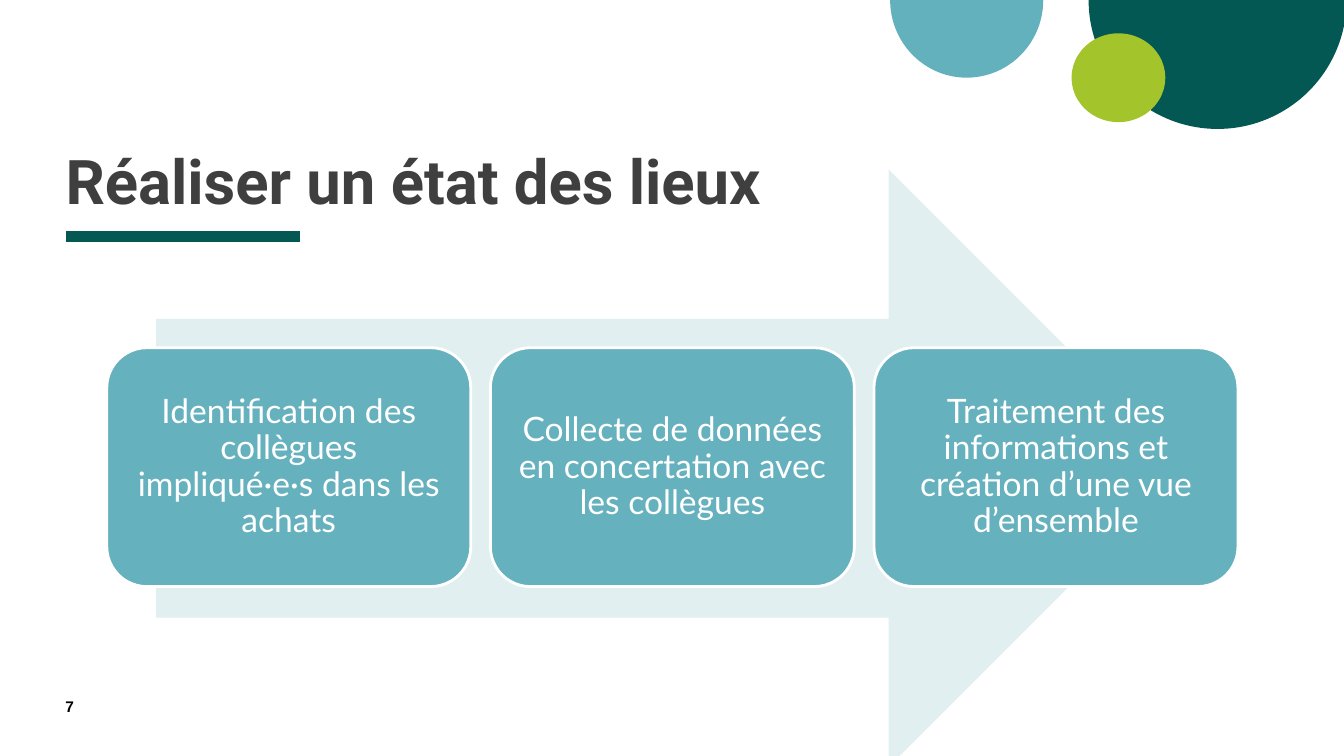
from pptx import Presentation
from pptx.dml.color import RGBColor
from pptx.enum.shapes import MSO_CONNECTOR, MSO_SHAPE
from pptx.enum.text import MSO_ANCHOR, PP_ALIGN
from pptx.oxml.xmlchemy import OxmlElement
from pptx.util import Pt

COLORS = {
    "forest": "035854",
    "teal": "64B1BE",
    "lime": "A3C42A",
    "mist": "E1EFF1",
    "step": "65B1BE",
    "white": "FFFFFF",
    "heading": "3F3F3F",
    "black": "000000",
}
STEPS = [
    "Identification des collègues impliqué·e·s dans les achats",
    "Collecte de données en concertation avec les collègues",
    "Traitement des informations et création d’une vue d’ensemble",
]
MARGIN = 46.8


def rgb(name):
    return RGBColor.from_string(COLORS[name])


def write(frame, text, *, font, size, color, bold=False, spacing=1.0,
          align=PP_ALIGN.LEFT, anchor=MSO_ANCHOR.TOP, inset=0):
    frame.word_wrap = True
    frame.vertical_anchor = anchor
    frame.margin_left = frame.margin_right = Pt(inset)
    frame.margin_top = frame.margin_bottom = Pt(inset)
    paragraph = frame.paragraphs[0]
    paragraph.alignment = align
    paragraph.line_spacing = spacing
    run = paragraph.add_run()
    run.text = text
    run.font.name = font
    run.font.size = Pt(size)
    run.font.bold = bold
    run.font.color.rgb = rgb(color)


class Deck:
    def __init__(self):
        self.presentation = Presentation()
        self.presentation.slide_width = Pt(960)
        self.presentation.slide_height = Pt(540)
        self.slide = self.presentation.slides.add_slide(
            self.presentation.slide_layouts[6])

    def shape(self, kind, left, top, width, height, fill, outline=None,
              adjustments=()):
        shape = self.slide.shapes.add_shape(
            kind, Pt(left), Pt(top), Pt(width), Pt(height))
        shape.shadow.inherit = False
        shape.fill.solid()
        shape.fill.fore_color.rgb = rgb(fill)
        if outline:
            shape.line.color.rgb = rgb(outline)
            shape.line.width = Pt(2)
        else:
            shape.line.fill.background()
        for index, value in enumerate(adjustments):
            shape.adjustments[index] = value
        return shape

    def half_disc(self, left, top, width, height, fill):
        self.shape(MSO_SHAPE.PIE, left, top, width, height, fill,
                   adjustments=(0, 108))

    def rule(self, left, right, y, color, weight):
        rule = self.slide.shapes.add_connector(
            MSO_CONNECTOR.STRAIGHT, Pt(left), Pt(y), Pt(right), Pt(y))
        rule.line.color.rgb = rgb(color)
        rule.line.width = Pt(weight)
        rule._element.spPr.append(OxmlElement("a:effectLst"))

    def text(self, text, left, top, width, height, **style):
        box = self.slide.shapes.add_textbox(
            Pt(left), Pt(top), Pt(width), Pt(height))
        write(box.text_frame, text, **style)

    def step(self, text, left, top, width, height):
        card = self.shape(MSO_SHAPE.ROUNDED_RECTANGLE, left, top, width,
                          height, "step", "white", (0.167,))
        write(card.text_frame, text, font="Lato", size=24, color="white",
              spacing=0.9, align=PP_ALIGN.CENTER, anchor=MSO_ANCHOR.MIDDLE,
              inset=9.4)


def main():
    deck = Deck()
    deck.half_disc(777.6, -92.2, 184.3, 184.3, "forest")
    deck.rule(MARGIN, 214.6, 169.2, "forest", 8)
    deck.half_disc(635.8, -55.4, 109.4, 110.9, "teal")
    deck.shape(MSO_SHAPE.OVAL, 765.4, 23.8, 67, 63.4, "lime")
    deck.text("Réaliser un état des lieux", MARGIN, 29.5, 534.2, 125.3,
              font="Roboto", size=44, color="heading", bold=True,
              spacing=0.8, anchor=MSO_ANCHOR.BOTTOM)
    deck.text("7", MARGIN, 498.2, 41, 19.4,
              font="Arial", size=11, color="black", bold=True)
    deck.shape(MSO_SHAPE.RIGHT_ARROW, 111.6, 121, 736.6, 427, "mist",
               adjustments=(0.5, 0.5))
    for index, step in enumerate(STEPS):
        deck.step(step, 76.3 + index * 274, 248.4, 260, 170.6)
    deck.presentation.save("out.pptx")


if __name__ == "__main__":
    main()
